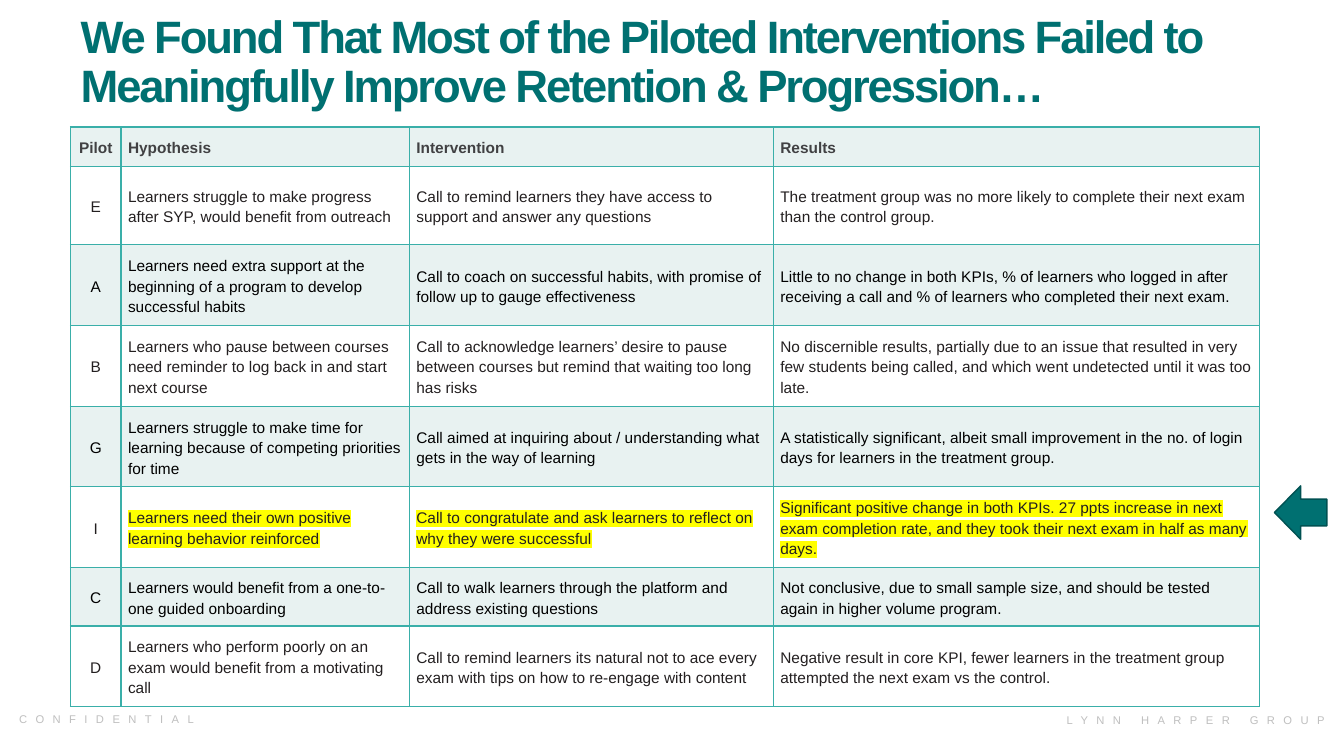
from pptx import Presentation
from pptx.dml.color import RGBColor
from pptx.enum.shapes import MSO_SHAPE
from pptx.enum.text import MSO_ANCHOR, PP_ALIGN
from pptx.oxml import parse_xml
from pptx.oxml.ns import nsdecls
from pptx.util import Inches, Pt

LEFT, CENTER, RIGHT = PP_ALIGN.LEFT, PP_ALIGN.CENTER, PP_ALIGN.RIGHT
MIDDLE = MSO_ANCHOR.MIDDLE
LEFT_ARROW = MSO_SHAPE.LEFT_ARROW
TITLE_ONLY = 5

TEAL, DARK_TEAL, BORDER = "007071", "005152", "3AAFA9"
BAND, WHITE, YELLOW = "E8F2F1", "FFFFFF", "FFFF00"
HEADER_INK, PLAIN_INK, BAND_INK, GREY = "414143", "231F20", "000000", "BFBFBF"

TITLE = ("We Found That Most of the Piloted Interventions Failed to "
         "Meaningfully Improve Retention & Progression…")
COLUMNS = [0.5, 2.86, 3.61, 4.82]
ROWS = [0.39] + [0.78] * 5 + [0.57, 0.78]
HIGHLIGHTED_PILOT = "I"
PILOTS = [
    ("Pilot", "Hypothesis", "Intervention", "Results"),
    ("E", "Learners struggle to make progress after SYP, would benefit from outreach",
     "Call to remind learners they have access to support and answer any questions",
     "The treatment group was no more likely to complete their next exam than the control group."),
    ("A", "Learners need extra support at the beginning of a program to develop successful habits",
     "Call to coach on successful habits, with promise of follow up to gauge effectiveness",
     "Little to no change in both KPIs, % of learners who logged in after receiving a call "
     "and % of learners who completed their next exam."),
    ("B", "Learners who pause between courses need reminder to log back in and start next course",
     "Call to acknowledge learners’ desire to pause between courses but remind that waiting "
     "too long has risks",
     "No discernible results, partially due to an issue that resulted in very few students "
     "being called, and which went undetected until it was too late."),
    ("G", "Learners struggle to make time for learning because of competing priorities for time",
     "Call aimed at inquiring about / understanding what gets in the way of learning",
     "A statistically significant, albeit small improvement in the no. of login days for "
     "learners in the treatment group."),
    ("I", "Learners need their own positive learning behavior reinforced",
     "Call to congratulate and ask learners to reflect on why they were successful",
     "Significant positive change in both KPIs. 27 ppts increase in next exam completion rate, "
     "and they took their next exam in half as many days."),
    ("C", "Learners would benefit from a one-to-one guided onboarding",
     "Call to walk learners through the platform and address existing questions",
     "Not conclusive, due to small sample size, and should be tested again in higher volume program."),
    ("D", "Learners who perform poorly on an exam would benefit from a motivating call",
     "Call to remind learners its natural not to ace every exam with tips on how to re-engage "
     "with content",
     "Negative result in core KPI, fewer learners in the treatment group attempted the next "
     "exam vs the control."),
]


def rgb(value):
    """Turn a hex string into a colour."""
    return RGBColor.from_string(value)


def write(tf, text, color, size, align=LEFT, bold=False, line=1.0, track=0):
    """Write one formatted paragraph and return its run."""
    p = tf.paragraphs[0]
    p.alignment, p.line_spacing = align, line
    r = p.add_run()
    r.text = text
    for name, value in {"name": "Arial", "size": Pt(size), "bold": bold}.items():
        setattr(r.font, name, value)
    r.font.color.rgb = rgb(color)
    if track:
        r.font._element.set("spc", str(int(track * 100)))
    return r


def highlight(r, color):
    """Mark a run with a background colour."""
    mark = parse_xml(f'<a:highlight {nsdecls("a")}><a:srgbClr val="{color}"/></a:highlight>')
    r.font._element.solidFill.addnext(mark)


def add_title(s, x, y, w, h):
    """Place the slide title in its placeholder."""
    sp = s.shapes.title
    sp.left, sp.top, sp.width, sp.height = map(Inches, (x, y, w, h))
    sp.text_frame.word_wrap = True
    sp.text_frame.vertical_anchor = MIDDLE
    write(sp.text_frame, TITLE, TEAL, 32.4, bold=True, line=0.9, track=-1.5)


def add_footer(s, text, align, x, y, w, h):
    """Place one widely tracked footer label."""
    tf = s.shapes.add_textbox(*map(Inches, (x, y, w, h))).text_frame
    tf.word_wrap = True
    write(tf, text, GREY, 8, align, track=6)


def format_cell(cell, fill):
    """Give a cell its margins, borders and fill."""
    for side in ("left", "right", "top", "bottom"):
        setattr(cell, f"margin_{side}", Inches(0.07))
    cell.vertical_anchor = MIDDLE
    tcPr = cell._tc.get_or_add_tcPr()
    for edge in "LRTB":
        tcPr.append(parse_xml(
            f'<a:ln{edge} {nsdecls("a")} w="12700"><a:solidFill>'
            f'<a:srgbClr val="{BORDER}"/></a:solidFill></a:ln{edge}>'))
    cell.fill.solid()
    cell.fill.fore_color.rgb = rgb(fill)


def add_pilot_table(s, x, y):
    """Build the banded table of pilots."""
    table = s.shapes.add_table(len(ROWS), len(COLUMNS), Inches(x), Inches(y),
                               Inches(sum(COLUMNS)), Inches(sum(ROWS))).table
    table.horz_banding = False
    for column, width in zip(table.columns, COLUMNS):
        column.width = Inches(width)
    for i, (row, height, texts) in enumerate(zip(table.rows, ROWS, PILOTS)):
        row.height = Inches(height)
        fill, ink = (WHITE, PLAIN_INK) if i % 2 else (BAND, BAND_INK)
        for j, (cell, text) in enumerate(zip(row.cells, texts)):
            format_cell(cell, fill)
            r = write(cell.text_frame, text, ink if i else HEADER_INK, 11,
                      LEFT if j else CENTER, bold=i == 0, line=1.2)
            if j and texts[0] == HIGHLIGHTED_PILOT:
                highlight(r, YELLOW)


def add_arrow(s, x, y, w, h):
    """Point at the pilot that worked."""
    sp = s.shapes.add_shape(LEFT_ARROW, *map(Inches, (x, y, w, h)))
    sp.shadow.inherit = False
    sp.fill.solid()
    sp.fill.fore_color.rgb = rgb(TEAL)
    sp.line.color.rgb = rgb(DARK_TEAL)
    sp.line.width = Pt(1)


def main():
    """Build and save the slide."""
    prs = Presentation()
    prs.slide_width, prs.slide_height = Inches(13.33), Inches(7.5)
    s = prs.slides.add_slide(prs.slide_layouts[TITLE_ONLY])
    add_footer(s, "LYNN HARPER GROUP", RIGHT, 9.76, 7.03, 3.48, 0.24)
    add_footer(s, "CONFIDENTIAL", LEFT, 0.09, 7.02, 3.48, 0.24)
    add_title(s, 0.7, 0.14, 11.72, 0.97)
    add_pilot_table(s, 0.7, 1.26)
    add_arrow(s, 12.64, 4.82, 0.52, 0.53)
    prs.save("out.pptx")


if __name__ == "__main__":
    main()
